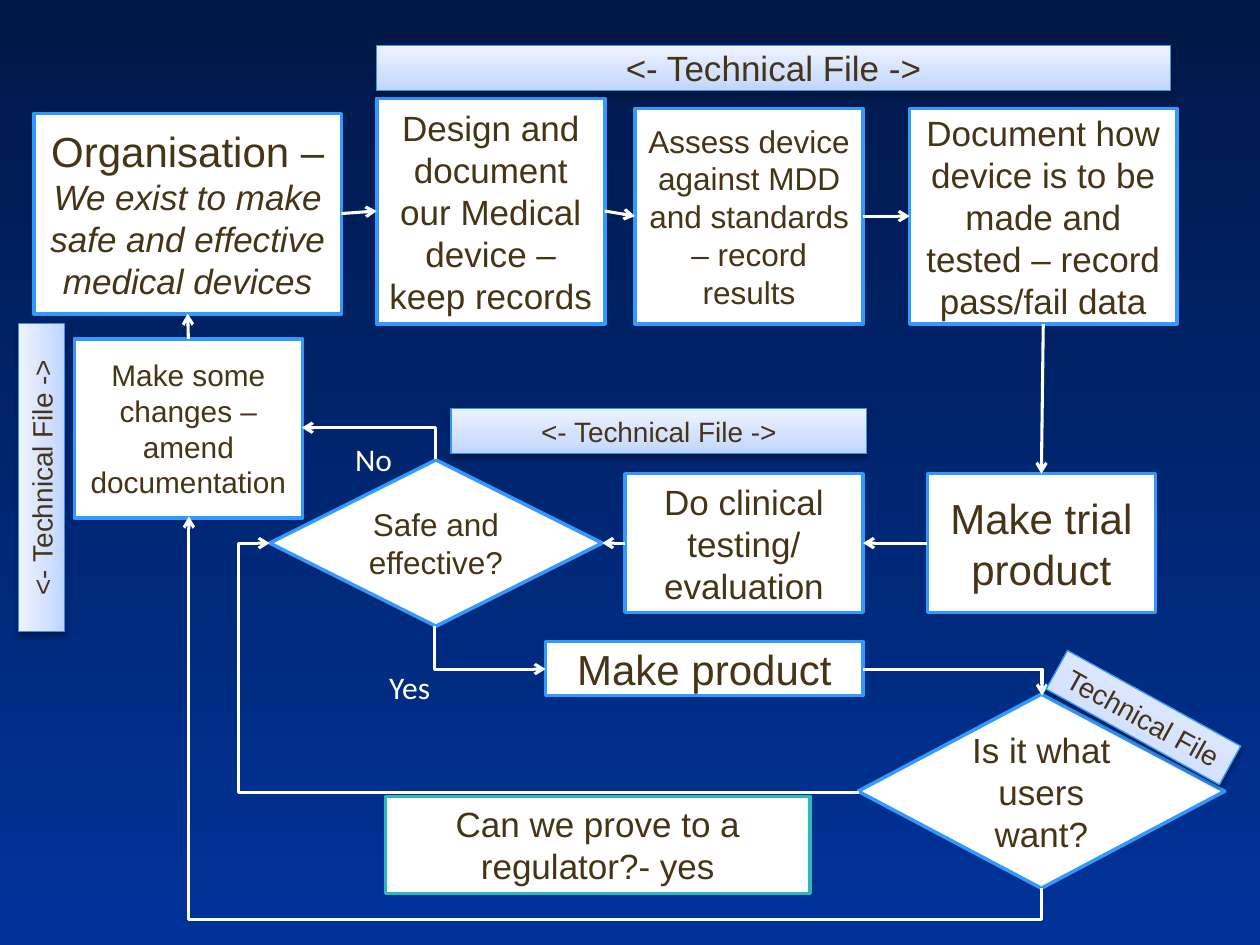
from copy import deepcopy

from lxml import etree
from pptx import Presentation
from pptx.dml.color import RGBColor
from pptx.enum.shapes import MSO_CONNECTOR, MSO_SHAPE
from pptx.enum.text import MSO_ANCHOR, PP_ALIGN
from pptx.oxml import parse_xml
from pptx.oxml.ns import nsdecls, qn
from pptx.util import Inches, Pt

PROCESS = MSO_SHAPE.FLOWCHART_PROCESS
DECISION = MSO_SHAPE.FLOWCHART_DECISION
STRAIGHT, ELBOW = MSO_CONNECTOR.STRAIGHT, MSO_CONNECTOR.ELBOW
CENTER, LEFT = PP_ALIGN.CENTER, PP_ALIGN.LEFT
MIDDLE = MSO_ANCHOR.MIDDLE
TOP_SITE, LEFT_SITE, BOTTOM_SITE, RIGHT_SITE = range(4)

WHITE = RGBColor(0xFF, 0xFF, 0xFF)
BROWN = RGBColor(0x46, 0x34, 0x16)
BLUE = RGBColor(0x33, 0x99, 0xFF)
BAR_BLUE = RGBColor(0x2D, 0x96, 0xFE)
TEAL = RGBColor(0x2D, 0xB9, 0xB9)
BACKGROUND = [(0, RGBColor(0x00, 0x18, 0x47)), (1, RGBColor(0x00, 0x33, 0x99))]
BAR_STOPS = [(0, RGBColor(0xBF, 0xD4, 0xFF)), (0.35, RGBColor(0xD2, 0xE0, 0xFF)),
             (1, RGBColor(0xEE, 0xF3, 0xFF))]

# Steps: name, shape, (left, top, width, height), outline, paragraphs of (text, size, italic)
STEPS = [
    ("organisation", PROCESS, (0.27, 0.9, 2.44, 1.59), BLUE,
     [[("Organisation – ", 24, False),
       ("We exist to make safe and effective medical devices", 20, True)]]),
    ("design", PROCESS, (2.99, 0.78, 1.81, 1.79), BLUE,
     [[("Design and document our Medical device – keep records", 20, False)]]),
    ("assess", PROCESS, (5.04, 0.86, 1.81, 1.71), BLUE,
     [[("Assess device against MDD and standards – record results", 18, False)]]),
    ("document", PROCESS, (7.22, 0.86, 2.12, 1.71), BLUE,
     [[("Document how device is to be made and tested – record pass/fail data", 20, False)]]),
    ("trial", PROCESS, (7.36, 3.76, 1.81, 1.1), BLUE, [[("Make trial product", 24, False)]]),
    ("clinical", PROCESS, (4.96, 3.76, 1.89, 1.1), BLUE,
     [[("Do clinical testing/", 20, False)], [("evaluation", 20, False)]]),
    ("safe", DECISION, (2.14, 3.65, 2.64, 1.32), BLUE, [[("Safe and effective?", 18, False)]]),
    ("changes", PROCESS, (0.59, 2.69, 1.81, 1.42), BLUE,
     [[("Make some changes – amend documentation", 17, False)]]),
    ("product", PROCESS, (4.33, 5.09, 2.52, 0.43), BLUE, [[("Make product", 24, False)]]),
    ("users", DECISION, (6.81, 5.51, 2.91, 1.54), BLUE, [[("Is it what users want?", 20, False)]]),
    ("regulator", PROCESS, (3.06, 6.32, 3.37, 0.77), TEAL,
     [[("Can we prove to a regulator?- yes", 20, False)]]),
]

# Technical file bars: text, size, place, rotation
BARS = [
    ("<- Technical File ->", 20, (2.99, 0.36, 6.3, 0.36), 0),
    ("<- Technical File ->", 16, (3.58, 3.24, 3.3, 0.36), 0),
    ("<- Technical File ->", 16, (-0.89, 3.61, 2.44, 0.36), 270),
    ("Technical File", 16, (8.29, 5.52, 1.57, 0.35), 28.9),
]

ANSWERS = [("No", (2.72, 3.44, 0.68, 0.57)), ("Yes", (2.99, 5.25, 0.92, 0.57))]

# Straight arrows: start step, its side, end step, its side
ARROWS = [
    ("organisation", RIGHT_SITE, "design", LEFT_SITE),
    ("design", RIGHT_SITE, "assess", LEFT_SITE),
    ("assess", RIGHT_SITE, "document", LEFT_SITE),
    ("document", BOTTOM_SITE, "trial", TOP_SITE),
    ("trial", LEFT_SITE, "clinical", RIGHT_SITE),
    ("clinical", LEFT_SITE, "safe", RIGHT_SITE),
    ("changes", TOP_SITE, "organisation", BOTTOM_SITE),
]

# Bent arrows: the ends as above, then preset, place, rotation, flip, adjustment
BENT_ARROWS = [
    (("safe", TOP_SITE, "changes", RIGHT_SITE),
     "bentConnector2", (2.8, 2.99, 0.25, 1.06), 270, "flipV", None),
    (("safe", BOTTOM_SITE, "product", LEFT_SITE),
     "bentConnector2", (3.72, 4.7, 0.34, 0.88), 270, "flipH", None),
    (("product", RIGHT_SITE, "users", TOP_SITE),
     "bentConnector2", (6.85, 5.31, 1.42, 0.21), 0, None, None),
    (("users", LEFT_SITE, "safe", LEFT_SITE),
     "bentConnector3", (2.14, 4.31, 4.68, 1.98), 180, None, 105300),
    (("users", BOTTOM_SITE, "changes", BOTTOM_SITE),
     "bentConnector3", (3.41, 2.19, 2.95, 6.77), 90, "flipH", -8500),
]


def set_gradient(fill, stops, angle):
    fill.gradient()
    fill.gradient_angle = angle
    stop_list = fill.gradient_stops[0]._gs.getparent()
    for _ in stops[2:]:
        stop_list.append(deepcopy(stop_list[0]))
    for stop, (position, color) in zip(fill.gradient_stops, stops):
        stop.position = position
        stop.color.rgb = color


def write(shape, paragraphs, color=BROWN, font="Arial", align=CENTER):
    frame = shape.text_frame
    frame.word_wrap = True
    for index, spans in enumerate(paragraphs):
        para = frame.paragraphs[0] if index == 0 else frame.add_paragraph()
        para.alignment = align
        for text, size, italic in spans:
            span = para.add_run()
            span.text = text
            for name, value in {"name": font, "size": Pt(size), "italic": italic}.items():
                setattr(span.font, name, value)
            span.font.color.rgb = color


def add_block(page, kind, place, outline, width, paragraphs):
    shape = page.shapes.add_shape(kind, *map(Inches, place))
    shape.shadow.inherit = False
    shape.line.color.rgb = outline
    shape.line.width = Pt(width)
    shape.text_frame.vertical_anchor = MIDDLE
    write(shape, paragraphs)
    return shape


def add_arrow(page, steps, ends, kind):
    start, start_site, end, end_site = ends
    arrow = page.shapes.add_connector(kind, 0, 0, 0, 0)
    arrow.begin_connect(steps[start], start_site)
    arrow.end_connect(steps[end], end_site)
    arrow.line.color.rgb = WHITE
    arrow.line.width = Pt(1.75)
    properties = arrow._element.spPr
    etree.SubElement(properties.find(qn("a:ln")), qn("a:tailEnd"), type="arrow")
    etree.SubElement(properties, qn("a:effectLst"))
    return arrow


def bend(arrow, preset, place, rotation, flip, adjustment):
    properties = arrow._element.spPr
    frame = properties.find(qn("a:xfrm"))
    for name in ("flipH", "flipV"):
        frame.attrib.pop(name, None)
    for name, value in zip(("left", "top", "width", "height"), place):
        setattr(arrow, name, Inches(value))
    frame.set("rot", str(rotation * 60000))
    if flip:
        frame.set(flip, "1")
    geometry = properties.find(qn("a:prstGeom"))
    geometry.set("prst", preset)
    if adjustment is not None:
        etree.SubElement(geometry.find(qn("a:avLst")), qn("a:gd"),
                         name="adj1", fmla=f"val {adjustment}")


def add_soft_shadow(shape):
    effects = shape._element.spPr.find(qn("a:effectLst"))
    effects.append(parse_xml(
        f'<a:outerShdw {nsdecls("a")} blurRad="{Pt(3.1)}" dist="{Pt(1.6)}" dir="5400000"'
        ' rotWithShape="0"><a:srgbClr val="000000"><a:alpha val="38000"/></a:srgbClr>'
        '</a:outerShdw>'))


def main():
    deck = Presentation()
    deck.slide_width, deck.slide_height = Inches(10), Inches(7.5)
    page = deck.slides.add_slide(deck.slide_layouts[6])
    set_gradient(page.background.fill, BACKGROUND, 270)

    # Process boxes and decisions
    steps = {}
    for name, kind, place, outline, paragraphs in STEPS:
        step = add_block(page, kind, place, outline, 2, paragraphs)
        step.fill.solid()
        step.fill.fore_color.rgb = WHITE
        steps[name] = step

    # Flow arrows
    for ends in ARROWS:
        add_arrow(page, steps, ends, STRAIGHT)
    for ends, *route in BENT_ARROWS:
        bend(add_arrow(page, steps, ends, ELBOW), *route)

    # Technical file bars
    for text, size, place, rotation in BARS:
        bar = add_block(page, PROCESS, place, BAR_BLUE, 0.75, [[(text, size, False)]])
        set_gradient(bar.fill, BAR_STOPS, 90)
        bar.rotation = rotation
        add_soft_shadow(bar)

    # Answers beside the first decision
    for text, place in ANSWERS:
        box = page.shapes.add_textbox(*map(Inches, place))
        write(box, [[(text, 18, False)]], WHITE, "Calibri", LEFT)

    deck.save("out.pptx")


if __name__ == "__main__":
    main()
